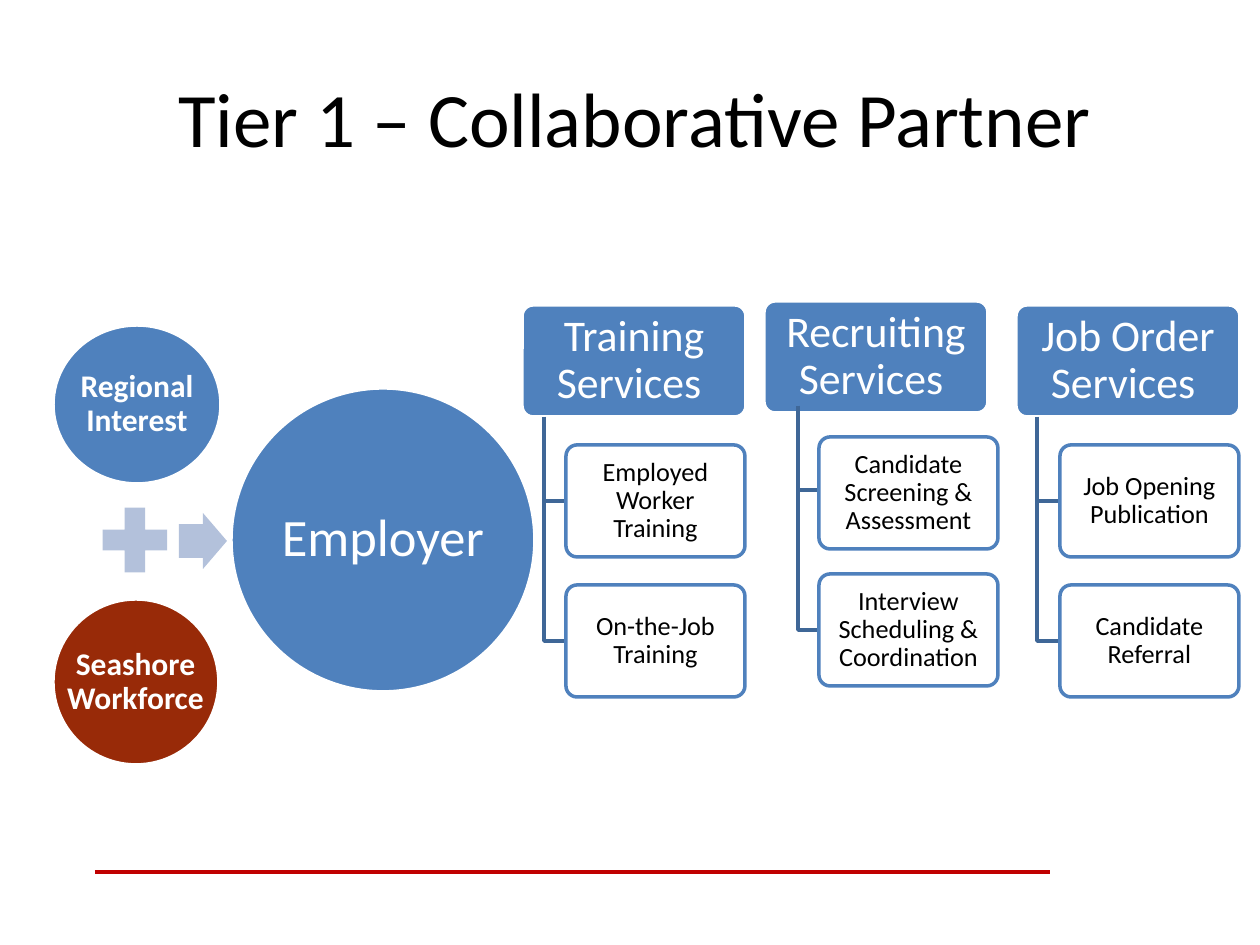
from lxml.etree import SubElement
from pptx import Presentation
from pptx.dml.color import RGBColor as Rgb
from pptx.enum.shapes import MSO_CONNECTOR as Wire, MSO_SHAPE as Kind
from pptx.enum.text import MSO_ANCHOR as Anchor, PP_ALIGN as Align
from pptx.oxml.ns import qn
from pptx.util import Pt

PX = 7257  # EMU in one px, at 126 px to the inch
FONT = "Calibri"
COLORS = {
    "blue": "4F81BD", "pale": "B3C1DB", "deep": "3F6797",
    "rust": "982A08", "red": "C00000", "white": "FFFFFF", "black": "000000",
}
HEAD = (224, 112)
BOX = (179, 112)
ARM, STEP = 84, 140  # first arm below the trunk's top, then the gap between arms

# heading, its corner, trunk's top, first box's corner, gap between boxes, boxes
SERVICES = [
    ("Training Services ", (522, 305), (544, 417), (566, 445), 140,
     ["Employed Worker Training", "On-the-Job Training"]),
    ("Recruiting Services ", (764, 301), (798, 406), (819, 437), 137,
     ["Candidate Screening & Assessment", "Interview Scheduling & Coordination"]),
    ("Job Order Services ", (1016, 305), (1037, 417), (1060, 445), 140,
     ["Job Opening Publication", "Candidate Referral"]),
]


def emu(*vals):
    return [val * PX for val in vals]


def color(name):
    return Rgb.from_string(COLORS[name])


def write(shape, text, size, ink="white", bold=False, pad=(0, 0), space=0.9):
    """Fill a shape with centred text; pad is the side and top inset in px."""
    frame = shape.text_frame
    frame.word_wrap = True
    frame.vertical_anchor = Anchor.MIDDLE
    frame.margin_left = frame.margin_right = pad[0] * PX
    frame.margin_top = frame.margin_bottom = pad[1] * PX
    par = frame.paragraphs[0]
    par.alignment = Align.CENTER
    par.line_spacing = space
    run = par.add_run()
    run.text = text
    font = run.font
    font.name, font.size, font.bold = FONT, Pt(size), bold
    font.color.rgb = color(ink)


def stroke(line, name, width=2):
    line.color.rgb = color(name)
    line.width = Pt(width)


def block(slide, kind, area, fill, edge=None, adjust=()):
    shape = slide.shapes.add_shape(kind, *emu(*area))
    shape.shadow.inherit = False
    shape.fill.solid()
    shape.fill.fore_color.rgb = color(fill)
    if edge:
        stroke(shape.line, edge)
    else:
        shape.line.fill.background()
    for i, val in enumerate(adjust):
        shape.adjustments[i] = val
    return shape


def card(slide, spot, size, fill, edge):
    return block(slide, Kind.ROUNDED_RECTANGLE, (*spot, *size), fill, edge, [0.1])


def branch(slide, top, drop, end):
    """Draw a line down from top, then right to end."""
    x, y = top
    form = slide.shapes.build_freeform(*emu(x, y))
    form.add_line_segments([emu(x, y + drop), emu(end, y + drop)], close=False)
    shape = form.convert_to_shape()
    shape.shadow.inherit = False
    shape.fill.background()
    stroke(shape.line, "deep")


def service(slide, name, spot, top, first, gap, items):
    write(card(slide, spot, HEAD, "blue", "white"), name, 25, pad=(9, 7))
    x, y = first
    for i, item in enumerate(items):
        branch(slide, top, ARM + i * STEP, x)
        box = card(slide, (x, y + i * gap), BOX, "white", "blue")
        write(box, item, 15, ink="black", pad=(7, 6))


def partners(slide):
    area = block(slide, Kind.OVAL, (53, 325, 168, 159), "blue", "white")
    write(area, "Regional Interest", 18, bold=True)
    block(slide, Kind.MATH_PLUS, (91, 496, 88, 88), "pale")
    block(slide, Kind.RIGHT_ARROW, (179, 513, 48, 56), "pale", adjust=[0.6, 0.5])
    firm = block(slide, Kind.OVAL, (231, 388, 304, 304), "blue", "white")
    write(firm, "Employer", 30)
    block(slide, Kind.OVAL, (53, 599, 166, 166), "rust", "white")
    label = slide.shapes.add_textbox(*emu(62, 614, 147, 136))
    write(label, "Seashore Workforce", 18, bold=True, pad=(2, 2))


def rule(slide):
    line = slide.shapes.add_connector(Wire.STRAIGHT, *emu(95, 872, 1050, 872))
    stroke(line.line, "red", 2.25)
    SubElement(line._element.spPr, qn("a:effectLst"))


def main():
    deck = Presentation()
    deck.slide_width, deck.slide_height = emu(1260, 945)
    slide = deck.slides.add_slide(deck.slide_layouts[5])
    title = slide.shapes.title
    title.left, title.top, title.width, title.height = emu(63, 38, 1144, 157)
    write(title, "Tier 1 – Collaborative Partner", 44, ink="black", pad=(12, 6), space=1.0)
    rule(slide)
    partners(slide)
    for row in SERVICES:
        service(slide, *row)
    deck.save("out.pptx")


if __name__ == "__main__":
    main()
